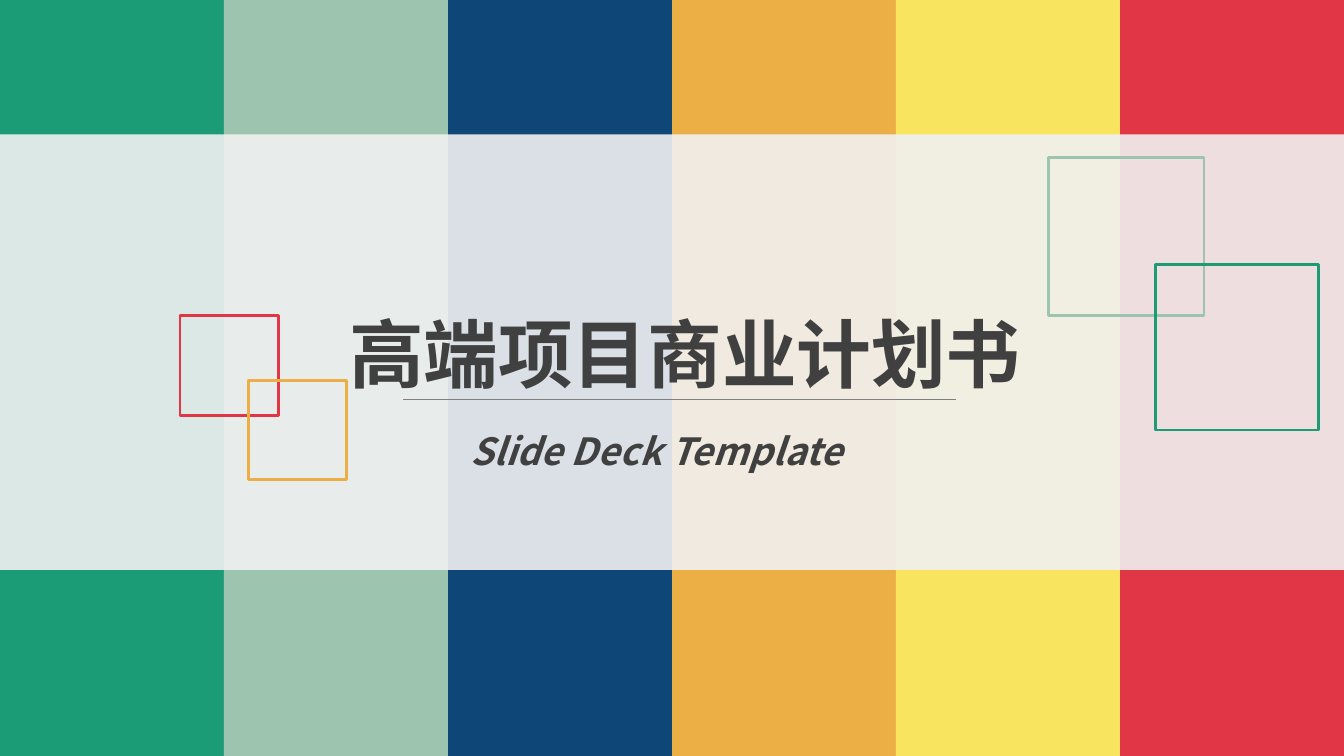
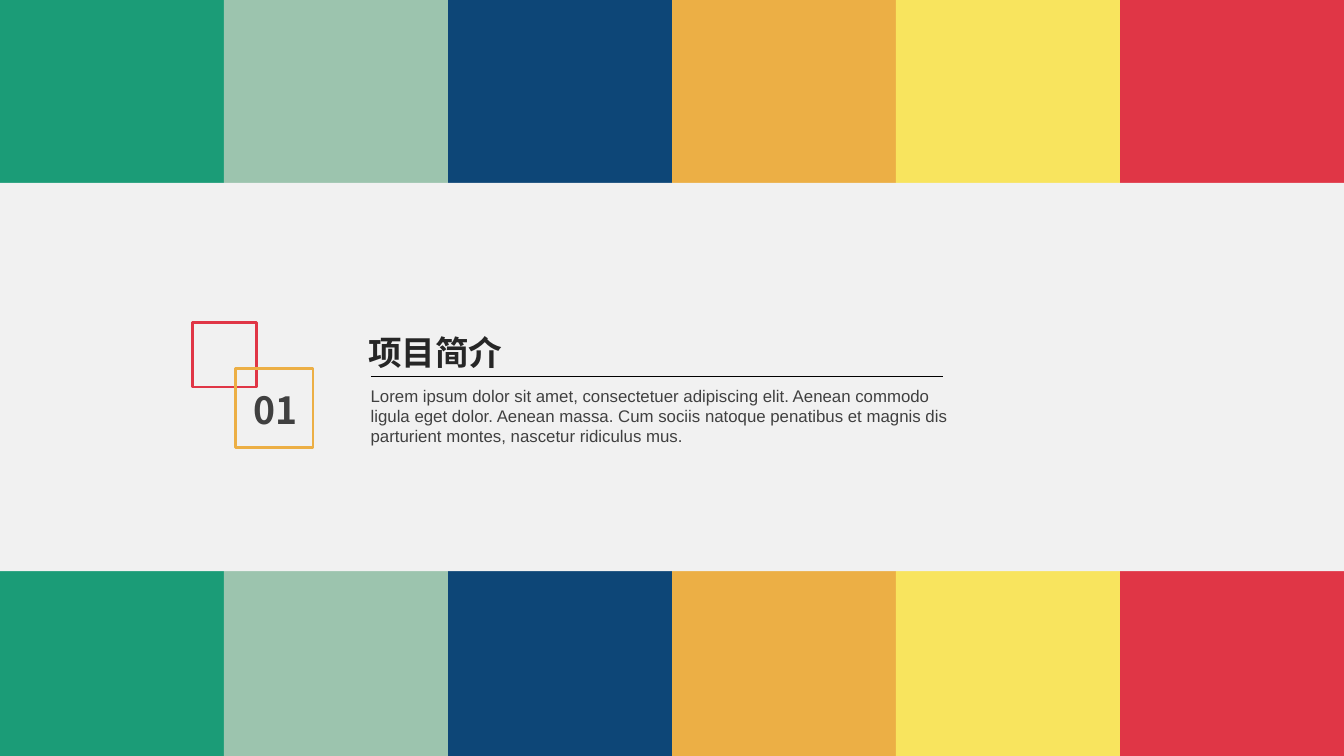
from dataclasses import dataclass

from lxml import etree
from pptx import Presentation
from pptx.dml.color import RGBColor
from pptx.enum.shapes import MSO_CONNECTOR, MSO_SHAPE
from pptx.enum.text import MSO_AUTO_SIZE
from pptx.oxml.ns import qn
from pptx.util import Inches, Pt

RECTANGLE = MSO_SHAPE.RECTANGLE
STRAIGHT = MSO_CONNECTOR.STRAIGHT
GROW = MSO_AUTO_SIZE.SHAPE_TO_FIT_TEXT
BLANK_LAYOUT = 6
WIDTH = 10
HEIGHT = WIDTH * 9 / 16


@dataclass(frozen=True)
class Theme:
    green: str = "1B9C77"
    sage: str = "9CC4AE"
    navy: str = "0D4677"
    amber: str = "ECAF45"
    yellow: str = "F8E45E"
    red: str = "E03646"
    paper: str = "F1F1F1"
    ink: str = "404040"
    heading: str = "262626"
    rule: str = "7F7F7F"
    black: str = "000000"
    display_font: str = "Noto Sans CJK SC"
    body_font: str = "Arial"
    title_size: int = 40
    number_size: int = 20
    heading_size: int = 18
    body_size: int = 9
    frame_width: float = 1.5
    rule_width: float = 0.5


THEME = Theme()
STRIPES = [THEME.green, THEME.sage, THEME.navy, THEME.amber, THEME.yellow, THEME.red]

COVER = {
    "band": (1, 3.24, 90),
    "texts": [
        ("Slide Deck Template", (3.4, 2.97, 3.35, 0.55),
         dict(size=THEME.number_size, bold=True, italic=True, spacing=1.5)),
        ("高端项目商业计划书", (2.5, 2.24, 5.3, 0.77),
         dict(size=THEME.title_size, bold=True)),
    ],
    "frames": [
        (THEME.red, (1.34, 2.35, 0.73, 0.74)),
        (THEME.amber, (1.85, 2.83, 0.73, 0.74)),
        (THEME.sage, (7.8, 1.17, 1.16, 1.18)),
        (THEME.green, (8.6, 1.97, 1.21, 1.23)),
    ],
    "rule": (3, 7.11, 2.97, THEME.rule),
}
SECTION = {
    "band": (1.36, 2.89, 100),
    "texts": [
        ("01", (1.79, 2.83, 0.55, 0.44),
         dict(size=THEME.number_size, bold=True, wrap=False)),
        ("项目简介", (2.64, 2.42, 1.22, 0.4),
         dict(size=THEME.heading_size, bold=True, color=THEME.heading, wrap=False)),
        ("Lorem ipsum dolor sit amet, consectetuer adipiscing elit. Aenean commodo "
         "ligula eget dolor. Aenean massa. Cum sociis natoque penatibus et magnis dis "
         "parturient montes, nascetur ridiculus mus.", (2.66, 2.82, 4.63, 0.56),
         dict(size=THEME.body_size, font=THEME.body_font)),
    ],
    "frames": [
        (THEME.red, (1.43, 2.4, 0.48, 0.48)),
        (THEME.amber, (1.75, 2.74, 0.58, 0.59)),
    ],
    "rule": (2.76, 7.02, 2.8, THEME.black),
}


def rgb(color):
    return RGBColor.from_string(color)


def inches(box):
    return [Inches(length) for length in box]


def add_rectangle(slide, box, fill=None, line=None, opacity=100):
    shape = slide.shapes.add_shape(RECTANGLE, *inches(box))
    shape.shadow.inherit = False
    if fill:
        shape.fill.solid()
        shape.fill.fore_color.rgb = rgb(fill)
        if opacity < 100:
            color = shape.element.spPr.find(".//" + qn("a:srgbClr"))
            etree.SubElement(color, qn("a:alpha"), val=str(opacity * 1000))
    else:
        shape.fill.background()
    if line:
        shape.line.color.rgb = rgb(line)
        shape.line.width = Pt(THEME.frame_width)
    else:
        shape.line.fill.background()
    return shape


def add_text(slide, text, box, size, font=THEME.display_font, color=THEME.ink,
             bold=False, italic=False, spacing=None, wrap=True):
    frame = slide.shapes.add_textbox(*inches(box)).text_frame
    frame.word_wrap = wrap
    frame.auto_size = GROW
    paragraph = frame.paragraphs[0]
    paragraph.line_spacing = spacing
    run = paragraph.add_run()
    run.text = text
    run.font.name = font
    run.font.size = Pt(size)
    run.font.bold = bold
    run.font.italic = italic
    run.font.color.rgb = rgb(color)
    properties = run.font._element
    etree.SubElement(properties, qn("a:ea"), typeface=font)


def add_rule(slide, left, right, top, color):
    rule = slide.shapes.add_connector(STRAIGHT, *inches((left, top, right, top)))
    rule.line.color.rgb = rgb(color)
    rule.line.width = Pt(THEME.rule_width)
    etree.SubElement(rule.element.spPr, qn("a:effectLst"))


def add_stripes(slide):
    stripe_width = WIDTH / len(STRIPES)
    layout_tree = slide.slide_layout.shapes.element
    for index, color in enumerate(STRIPES):
        box = (index * stripe_width, 0, stripe_width, HEIGHT)
        layout_tree.append(add_rectangle(slide, box, fill=color).element)


def fill_slide(slide, content):
    top, height, opacity = content["band"]
    add_rectangle(slide, (-0.03, top, WIDTH + 0.03, height), fill=THEME.paper, opacity=opacity)
    for text, box, text_format in content["texts"]:
        add_text(slide, text, box, **text_format)
    for color, box in content["frames"]:
        add_rectangle(slide, box, line=color)
    add_rule(slide, *content["rule"])


def main():
    presentation = Presentation()
    presentation.slide_width = Inches(WIDTH)
    presentation.slide_height = Inches(HEIGHT)
    background = presentation.slide_master.background.fill
    background.solid()
    background.fore_color.rgb = rgb(THEME.paper)
    layout = presentation.slide_layouts[BLANK_LAYOUT]
    slides = [presentation.slides.add_slide(layout) for _ in (COVER, SECTION)]
    add_stripes(slides[0])
    for slide, content in zip(slides, (COVER, SECTION)):
        fill_slide(slide, content)
    presentation.save("out.pptx")


if __name__ == "__main__":
    main()
